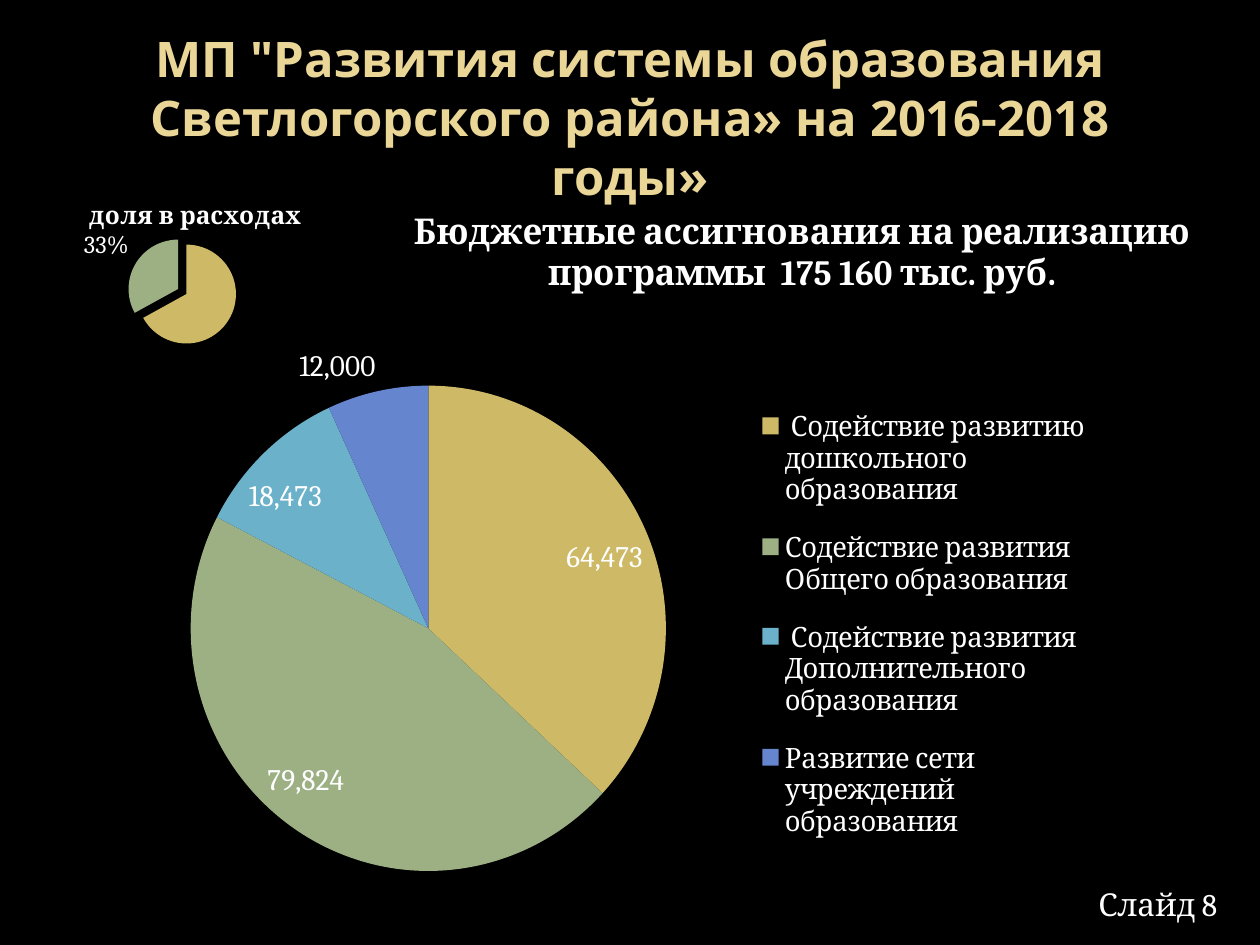
from lxml import etree
from pptx import Presentation
from pptx import util as u
from pptx.chart.data import CategoryChartData
from pptx.dml.color import RGBColor
from pptx.enum import chart as charts, text
from pptx.oxml import parse_xml
from pptx.oxml.ns import nsdecls, qn

WHITE = "FFFFFF"
GOLD, GREEN, TEAL, BLUE = "CEB966", "9CB084", "6BB1C9", "6585CF"
SERIF = "Cambria"


def color(value):
    return RGBColor.from_string(value)


def format_font(font, size, fill=WHITE, name=SERIF, bold=False):
    font.size = u.Pt(size)
    font.name = name
    font.bold = bold
    font.color.rgb = color(fill)


def add_text(slide, content, box, align=text.PP_ALIGN.LEFT,
             anchor=text.MSO_ANCHOR.TOP, **font):
    shape = slide.shapes.add_textbox(*map(u.Pt, box))
    frame = shape.text_frame
    frame.word_wrap = True
    frame.vertical_anchor = anchor
    paragraph = frame.paragraphs[0]
    paragraph.alignment = align
    run = paragraph.add_run()
    run.text = content
    format_font(run.font, **font)
    return shape


def set_layout(parent, after, x, y, width=None, height=None, inner=False):
    """Place a chart part by fractions of the chart area."""
    for old in parent.findall(qn("c:layout")):
        parent.remove(old)
    layout = parse_xml(f"<c:layout {nsdecls('c')}><c:manualLayout/></c:layout>")
    manual = layout[0]
    values = [("layoutTarget", "inner" if inner else None),
              ("xMode", "edge"), ("yMode", "edge"),
              ("x", x), ("y", y), ("w", width), ("h", height)]
    for tag, value in values:
        if value is not None:
            etree.SubElement(manual, qn(f"c:{tag}")).set("val", str(value))
    if after is None:
        parent.insert(0, layout)
    else:
        after.addnext(layout)


def add_pie(slide, box, name, categories, values, fills, title,
            title_size, title_at, plot, label_size, label_format,
            label_position):
    data = CategoryChartData(number_format="#,##0")
    data.categories = categories
    data.add_series(name, values)
    chart = slide.shapes.add_chart(
        charts.XL_CHART_TYPE.PIE, *map(u.Pt, box), data).chart
    format_font(chart.font, label_size)
    chart.has_legend = False

    # Title
    frame = chart.chart_title.text_frame
    frame.text = title
    format_font(frame.paragraphs[0].runs[0].font, title_size, bold=True)
    title_xml = chart.chart_title._element
    set_layout(title_xml, title_xml.find(qn("c:tx")), *title_at)

    # Slices and labels
    pie = chart.plots[0]
    pie.vary_by_categories = True
    set_layout(pie._element.getparent(), None, *plot, inner=True)
    series = pie.series[0]
    for index, fill in enumerate(fills):
        slice_fill = series.points[index].format.fill
        slice_fill.solid()
        slice_fill.fore_color.rgb = color(fill)
    labels = series.data_labels
    format_font(labels.font, label_size)
    labels.position = label_position
    labels.number_format = label_format
    labels.number_format_is_linked = False
    labels.show_percentage = "%" in label_format
    labels.show_value = not labels.show_percentage
    return chart


def add_budget_chart(slide):
    chart = add_pie(
        slide, (36, 111.6, 648, 402.5), "Series 1",
        [" Содействие развитию дошкольного образования",
         "Содействие развития Общего образования",
         " Содействие развития Дополнительного образования",
         "Развитие сети учреждений образования "],
        [64473, 79824, 18473, 12000], [GOLD, GREEN, TEAL, BLUE],
        "Бюджетные ассигнования на реализацию программы  175 160 тыс. руб.",
        20.3, (0.31, 0.01), (0.115, 0.26, 0.428, 0.71), 17, "#,##0",
        charts.XL_LABEL_POSITION.BEST_FIT)

    # The narrow slice has its label outside
    label = chart.plots[0].series[0].points[3].data_label
    format_font(label.font, 17)
    label.position = charts.XL_LABEL_POSITION.OUTSIDE_END

    # Legend
    chart.has_legend = True
    legend = chart.legend
    legend.position = charts.XL_LEGEND_POSITION.RIGHT
    legend.include_in_layout = False
    format_font(legend.font, 16)
    set_layout(legend._element, legend._element.find(qn("c:legendPos")),
               0.62, 0.27, 0.31, 0.68)


def add_share_chart(slide):
    share = "доля в расходах"
    chart = add_pie(
        slide, (20.2, 105.8, 166.3, 108.7), share, ["1", "2"], [67, 33],
        [GOLD, GREEN], share, 14, (0.17, 0.05),
        (0.07, 0.3, 0.87, 0.52), 14, "0%",
        charts.XL_LABEL_POSITION.OUTSIDE_END)
    series = chart.plots[0].series[0]

    # Only the second slice keeps its label
    hidden = parse_xml(f'<c:dLbl {nsdecls("c")}><c:idx val="0"/>'
                       '<c:delete val="1"/></c:dLbl>')
    series.data_labels._element.insert(0, hidden)

    # Pull the slices apart
    for point in series._element.findall(qn("c:dPt")):
        explosion = parse_xml(f'<c:explosion {nsdecls("c")} val="10"/>')
        point.find(qn("c:spPr")).addprevious(explosion)


def main():
    presentation = Presentation()
    presentation.slide_width = u.Pt(720)
    presentation.slide_height = u.Pt(540)
    slide = presentation.slides.add_slide(presentation.slide_layouts[6])
    slide.background.fill.solid()
    slide.background.fill.fore_color.rgb = color("000000")

    # Heading
    add_text(slide,
             'МП "Развития системы образования Светлогорского района» '
             'на 2016-2018 годы»',
             (36, 21.6, 648, 90), align=text.PP_ALIGN.CENTER,
             anchor=text.MSO_ANCHOR.MIDDLE, size=28, fill="EAD696",
             name="Open Sans", bold=True)

    # Charts
    add_budget_chart(slide)
    add_share_chart(slide)

    # Slide number
    add_text(slide, "Слайд 8", (620.6, 502.2, 85, 28.8), size=18)

    presentation.save("out.pptx")


if __name__ == "__main__":
    main()
